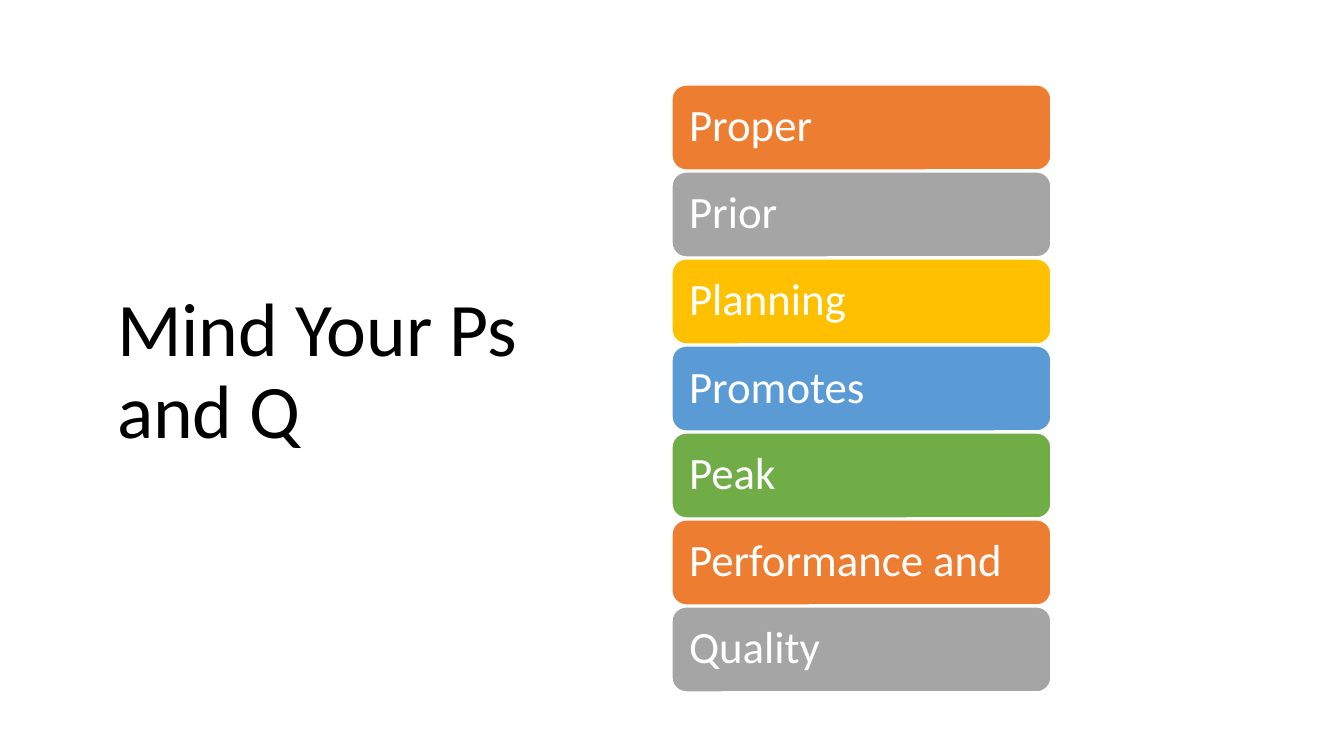
"""Build the "Mind Your Ps and Q" slide with its stack of coloured word bars."""
from dataclasses import dataclass

from pptx import Presentation
from pptx.dml.color import RGBColor
from pptx.enum.shapes import MSO_SHAPE
from pptx.enum.text import MSO_ANCHOR, MSO_AUTO_SIZE, PP_ALIGN
from pptx.util import Emu, Pt

ROUNDED = MSO_SHAPE.ROUNDED_RECTANGLE
MIDDLE = MSO_ANCHOR.MIDDLE
NO_FIT = MSO_AUTO_SIZE.NONE
LEFT = PP_ALIGN.LEFT

BLACK = RGBColor(0x00, 0x00, 0x00)
WHITE = RGBColor(0xFF, 0xFF, 0xFF)
ORANGE = RGBColor(0xED, 0x7D, 0x31)
GREY = RGBColor(0xA5, 0xA5, 0xA5)
GOLD = RGBColor(0xFF, 0xC0, 0x00)
BLUE = RGBColor(0x5B, 0x9B, 0xD5)
GREEN = RGBColor(0x70, 0xAD, 0x47)

PX_PER_INCH = 100.8
TITLE_ONLY = 5
BAR_LEFT, BAR_TOP, BAR_WIDTH, BAR_HEIGHT, BAR_PITCH = 672, 85, 379, 85, 87
BAR_INSET = 13


@dataclass(frozen=True)
class Bar:
    word: str
    fill: RGBColor


BARS = [
    Bar("Proper", ORANGE),
    Bar("Prior", GREY),
    Bar("Planning", GOLD),
    Bar("Promotes", BLUE),
    Bar("Peak", GREEN),
    Bar("Performance and", ORANGE),
    Bar("Quality", GREY),
]


def px(n: int) -> Emu:
    return Emu(round(n * 914400 / PX_PER_INCH))


def write(tf, text: str, size: int, color: RGBColor) -> None:
    frame = {"word_wrap": True, "auto_size": NO_FIT, "vertical_anchor": MIDDLE}
    for name, value in frame.items():
        setattr(tf, name, value)
    p = tf.paragraphs[0]
    for name, value in {"alignment": LEFT, "line_spacing": 0.9}.items():
        setattr(p, name, value)
    r = p.add_run()
    r.text = text
    for name, value in {"name": "Calibri", "size": Pt(size)}.items():
        setattr(r.font, name, value)
    r.font.color.rgb = color


def add_title(s, text: str) -> None:
    sp = s.shapes.title
    place = {"left": 107, "top": 211, "width": 505, "height": 324}
    for name, value in place.items():
        setattr(sp, name, px(value))
    write(sp.text_frame, text, 54, BLACK)


def add_bar(s, bar: Bar, row: int) -> None:
    top = BAR_TOP + row * BAR_PITCH
    sp = s.shapes.add_shape(
        ROUNDED, px(BAR_LEFT), px(top), px(BAR_WIDTH), px(BAR_HEIGHT))
    sp.shadow.inherit = False
    sp.fill.solid()
    sp.fill.fore_color.rgb = bar.fill
    sp.line.color.rgb = WHITE
    sp.line.width = Pt(1)
    for side in ("left", "top", "right", "bottom"):
        setattr(sp.text_frame, f"margin_{side}", px(BAR_INSET))
    write(sp.text_frame, bar.word, 32, WHITE)


def main() -> None:
    prs = Presentation()
    prs.slide_width, prs.slide_height = px(1344), px(756)
    s = prs.slides.add_slide(prs.slide_layouts[TITLE_ONLY])
    add_title(s, "Mind Your Ps and Q")
    for row, bar in enumerate(BARS):
        add_bar(s, bar, row)
    prs.save("out.pptx")


if __name__ == "__main__":
    main()
